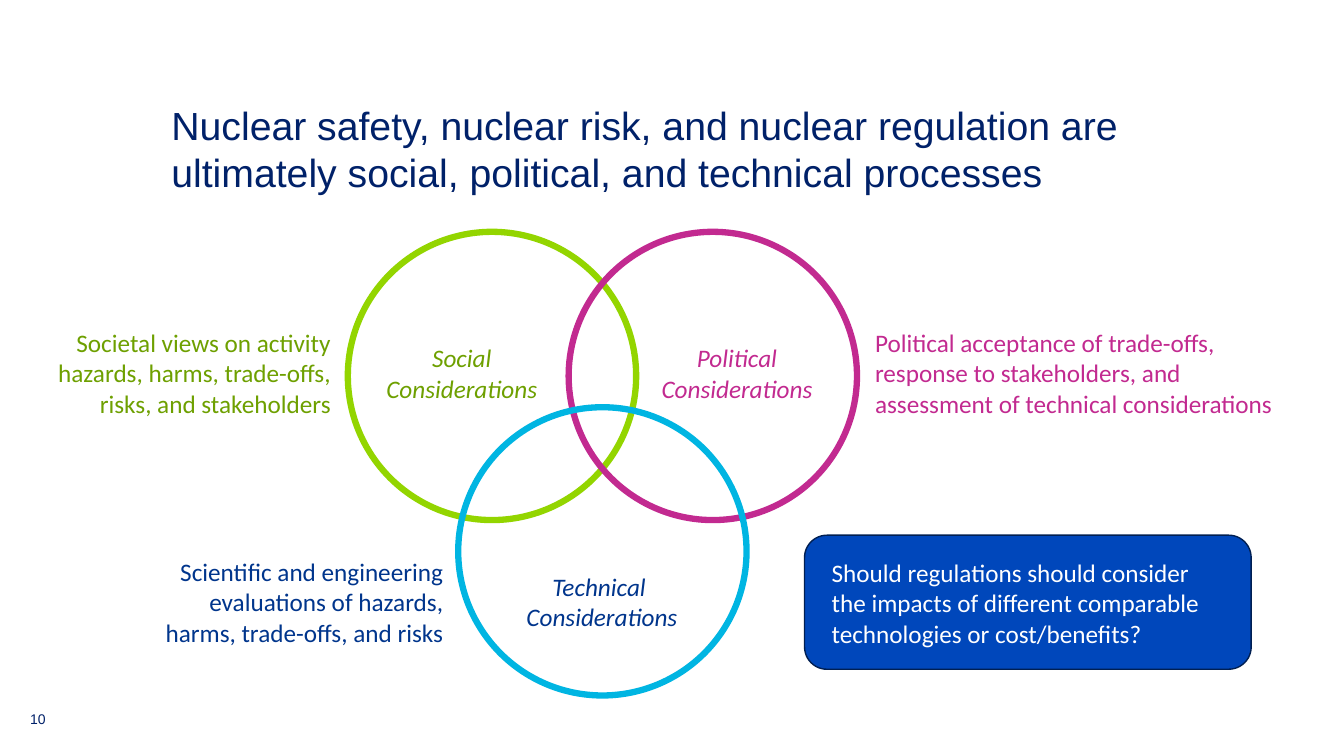
from dataclasses import dataclass

from pptx import Presentation
from pptx.dml.color import RGBColor
from pptx.enum.shapes import MSO_SHAPE
from pptx.enum.text import MSO_ANCHOR, MSO_AUTO_SIZE, PP_ALIGN
from pptx.util import Inches, Pt

OVAL, ROUND = MSO_SHAPE.OVAL, MSO_SHAPE.ROUNDED_RECTANGLE
LEFT, MID, RIGHT = PP_ALIGN.LEFT, PP_ALIGN.CENTER, PP_ALIGN.RIGHT
TOP, CENTER = MSO_ANCHOR.TOP, MSO_ANCHOR.MIDDLE
FIXED = MSO_AUTO_SIZE.NONE

CELL = 0.1  # side of a square grid cell, in inches
COLS, ROWS = 133.3, 75


@dataclass(frozen=True)
class Theme:
    navy: str = "002169"
    lime: str = "93D500"
    green: str = "6EA000"
    pink: str = "C22A90"
    sky: str = "00B5E2"
    blue: str = "00358C"
    panel: str = "0047BB"
    edge: str = "001F52"
    white: str = "FFFFFF"
    head: str = "Arial"
    body: str = "Calibri"
    title: int = 28
    text: int = 18
    small: int = 10
    ring: float = 4.5
    thin: float = 1


THEME = Theme()


@dataclass(frozen=True)
class Box:
    """An area of the slide, counted in grid cells."""
    x: float
    y: float
    w: float
    h: float

    def sub(self, x, y, w, h):
        return Box(self.x + x, self.y + y, w, h)

    def emu(self):
        return [Inches(n * CELL) for n in (self.x, self.y, self.w, self.h)]


def color(code):
    return RGBColor.from_string(code)


def write(frame, text, *, ink, size=THEME.text, font=THEME.body, align=LEFT,
          italic=False, anchor=TOP, wrap=True, pad=(0.1, 0.05)):
    frame.word_wrap = wrap
    frame.auto_size = FIXED
    frame.vertical_anchor = anchor
    frame.margin_left = frame.margin_right = Inches(pad[0])
    frame.margin_top = frame.margin_bottom = Inches(pad[1])
    para = frame.paragraphs[0]
    para.text = text
    para.alignment = align
    for run in para.runs:
        run.font.name, run.font.size = font, Pt(size)
        run.font.italic = italic
        run.font.color.rgb = color(ink)


def label(slide, box, text, **style):
    write(slide.shapes.add_textbox(*box.emu()).text_frame, text, **style)


def draw(slide, kind, box, line, width, fill=None):
    shape = slide.shapes.add_shape(kind, *box.emu())
    shape.shadow.inherit = False
    if fill:
        shape.fill.solid()
        shape.fill.fore_color.rgb = color(fill)
    else:
        shape.fill.background()
    shape.line.color.rgb = color(line)
    shape.line.width = Pt(width)


def header(slide, box):
    title = slide.shapes.title
    title.left, title.top, title.width, title.height = box.emu()
    write(title.text_frame,
          "Nuclear safety, nuclear risk, and nuclear regulation are "
          "ultimately social, political, and technical processes",
          ink=THEME.navy, size=THEME.title, font=THEME.head, pad=(0, 0))


def venn(slide, box):
    """Three overlapping rings, each with a name inside and a note beside it."""
    side = 28.6
    across, down = box.w - side, box.h - side
    # ring offset, ring colour, ink, name, name area, note, note area, note side
    rings = [
        ((0, 0), THEME.lime, THEME.green,
         "Social Considerations", (1.7, 10.5, 19.2, 7.1),
         "Societal views on activity\n hazards, harms, trade-offs,\n"
         "risks, and stakeholders", (-30.7, 9, 30, 10.1), RIGHT),
        ((across, 0), THEME.pink, THEME.pink,
         "Political Considerations", (7.5, 10.5, 18.4, 7.1),
         "Political acceptance of trade-offs,\nresponse to stakeholders, and "
         "assessment of technical considerations", (29.4, 9, 42.1, 10.1), LEFT),
        ((across / 2, down), THEME.sky, THEME.blue,
         "Technical \nConsiderations", (5.7, 15.8, 17.1, 7.1),
         "Scientific and engineering\nevaluations of hazards, harms, "
         "trade-offs, and risks", (-31.8, 14.3, 31.3, 10.1), RIGHT),
    ]
    areas = [box.sub(*ring[0], side, side) for ring in rings]
    for area, ring in zip(areas, rings):
        draw(slide, OVAL, area, ring[1], THEME.ring)
    for area, (_, _, ink, name, spot, note, place, align) in zip(areas, rings):
        label(slide, area.sub(*place), note, ink=ink, align=align)
        label(slide, area.sub(*spot), name, ink=ink, align=MID, italic=True,
              wrap="\n" not in name)


def callout(slide, box):
    draw(slide, ROUND, box, THEME.edge, THEME.thin, THEME.panel)
    label(slide, box.sub(1.7, 1.7, box.w - 3.4, box.h - 3.2),
          "Should regulations should consider the impacts of different "
          "comparable technologies or cost/benefits?", ink=THEME.white)


def number(slide, box):
    label(slide, box, "10", ink=THEME.navy, size=THEME.small, font=THEME.head,
          anchor=CENTER, pad=(0, 0.05))


def main():
    deck = Presentation()
    deck.slide_width, deck.slide_height = Inches(COLS * CELL), Inches(ROWS * CELL)
    slide = deck.slides.add_slide(deck.slide_layouts[5])
    page = Box(0, 0, COLS, ROWS)
    header(slide, page.sub(17, 10, 106.1, 9.4))
    number(slide, page.sub(3, 69.3, 4.8, 4))
    venn(slide, page.sub(34.5, 23, 50.5, 46))
    callout(slide, page.sub(79.8, 53.1, 44.3, 13.3))
    deck.save("out.pptx")


if __name__ == "__main__":
    main()
